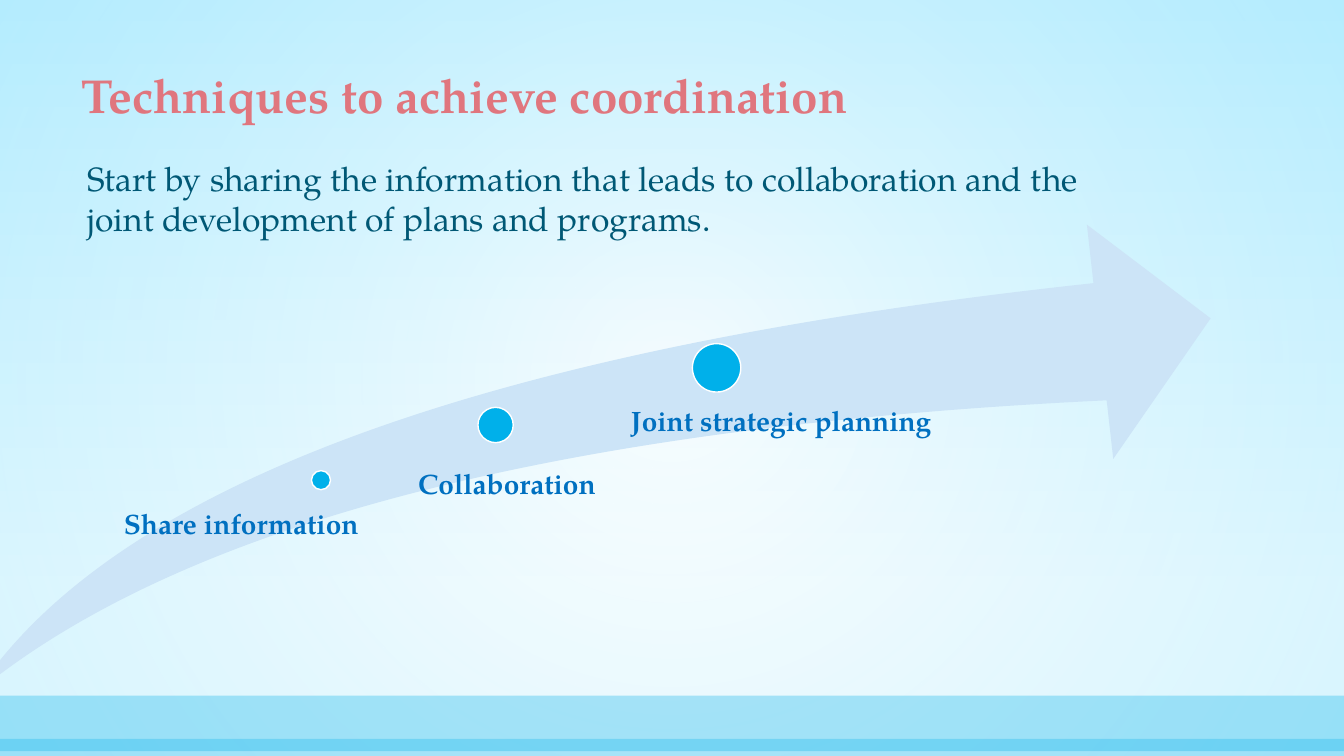
import pptx
import pptx.util
import pptx.dml.color
import pptx.enum.shapes
import pptx.enum.text
import pptx.oxml
import pptx.oxml.ns

Cm = pptx.util.Cm
Pt = pptx.util.Pt
KIND = pptx.enum.shapes.MSO_SHAPE
ANCHOR = pptx.enum.text.MSO_ANCHOR
ALIGN = pptx.enum.text.PP_ALIGN

WIDE, HIGH = 33.87, 19.05
FONT = "TeX Gyre Pagella"
HUES = {
    "sky": "C8F1FF", "edge": "91E4FF", "white": "FFFFFF", "dot": "00B0EA",
    "arrow": "CCE4F7", "title": "E0767E", "body": "005875", "label": "0070C0",
}

TITLE = "Techniques to achieve coordination"
BODY = ("Start by sharing the information that leads to collaboration "
        "and the joint development of plans and programs.")

# text, dot (centre x, centre y, diameter), label box, left inset
STEPS = [
    ("Share information", (8.09, 12.1, 0.48), (2.87, 12.85, 7.47, 1.42), 0.25),
    ("Collaboration", (12.49, 10.71, 0.89), (10.06, 11.86, 6.63, 2.82), 0.48),
    ("Joint strategic planning", (18.06, 9.27, 1.22),
     (15.24, 10.26, 11.71, 1.8), 0.66),
]

# top, height, opacity in percent
BANDS = [(17.53, 1.4, 30), (18.62, 0.43, 28)]

# stops: position in percent, colour, opacity in percent
SKY = [(0, "sky", 56), (79, "white", 100)]
GLOW = [(0, "white", 49), (100, "edge", 35)]
DOWN = '<a:lin ang="5400000" scaled="0"/>'
ROUND = ('<a:path path="circle"><a:fillToRect l="50000" t="50000" '
         'r="50000" b="50000"/></a:path>')


def rgb(name):
    return pptx.dml.color.RGBColor.from_string(HUES[name])


def find_fill(root):
    return root.find(".//" + pptx.oxml.ns.qn("a:solidFill"))


def shade(root, stops, course):
    """Replace the first solid fill under root by a gradient."""
    marks = "".join(
        f'<a:gs pos="{pos * 1000}"><a:srgbClr val="{HUES[name]}">'
        f'<a:alpha val="{alpha * 1000}"/></a:srgbClr></a:gs>'
        for pos, name, alpha in stops)
    grad = pptx.oxml.parse_xml(
        f'<a:gradFill {pptx.oxml.ns.nsdecls("a")} rotWithShape="1">'
        f'<a:gsLst>{marks}</a:gsLst>{course}</a:gradFill>')
    old = find_fill(root)
    old.getparent().replace(old, grad)


def fade(shape, alpha):
    node = pptx.oxml.parse_xml(
        f'<a:alpha {pptx.oxml.ns.nsdecls("a")} val="{alpha * 1000}"/>')
    find_fill(shape.element)[0].append(node)


def add_form(slide, kind, box, hue, line=None):
    form = slide.shapes.add_shape(kind, *map(Cm, box))
    form.shadow.inherit = False
    form.fill.solid()
    form.fill.fore_color.rgb = rgb(hue)
    if line:
        form.line.color.rgb = rgb(line)
        form.line.width = Pt(1)
    else:
        form.line.fill.background()
    return form


def add_text(slide, text, box, size, hue, bold=False, inset=(0.25, 0.13, 0.25, 0.13),
             anchor=ANCHOR.TOP, align=ALIGN.LEFT, space=1.0):
    frame = slide.shapes.add_textbox(*map(Cm, box)).text_frame
    frame.word_wrap = True
    frame.vertical_anchor = anchor
    (frame.margin_left, frame.margin_top,
     frame.margin_right, frame.margin_bottom) = map(Cm, inset)
    para = frame.paragraphs[0]
    para.alignment = align
    para.line_spacing = space
    run = para.add_run()
    run.text = text
    run.font.name = FONT
    run.font.size = Pt(size)
    run.font.bold = bold
    run.font.color.rgb = rgb(hue)


def add_back(slide):
    fill = slide.background.fill
    fill.solid()
    fill.fore_color.rgb = rgb("sky")
    shade(slide.element, SKY, DOWN)
    glow = add_form(slide, KIND.RECTANGLE, (0, 0, WIDE, HIGH), "white")
    shade(glow.element, GLOW, ROUND)
    for top, high, alpha in BANDS:
        band = add_form(slide, KIND.RECTANGLE, (0, top, WIDE, high), "dot")
        fade(band, alpha)


def add_steps(slide):
    arrow = add_form(slide, KIND.SWOOSH_ARROW, (-0.61, 5.66, 31.12, 11.81), "arrow")
    arrow.adjustments[0] = arrow.adjustments[1] = 0.25
    for text, (x, y, size), box, left in STEPS:
        add_form(slide, KIND.OVAL, (x - size / 2, y - size / 2, size, size),
                 "dot", line="white")
        add_text(slide, text, box, 20, "label", bold=True,
                 inset=(left, 0, 0, 0), space=0.9)


def main():
    deck = pptx.Presentation()
    deck.slide_width, deck.slide_height = Cm(WIDE), Cm(HIGH)
    slide = deck.slides.add_slide(deck.slide_layouts[6])
    add_back(slide)
    add_text(slide, BODY, (0.94, 3.61, 26.49, 2.41), 24, "body",
             inset=(1.27, 0.36, 0.25, 0), anchor=ANCHOR.MIDDLE, align=ALIGN.JUSTIFY)
    add_steps(slide)
    add_text(slide, TITLE, (1.8, 1.52, 23.65, 1.7), 34, "title", bold=True)
    deck.save("out.pptx")


if __name__ == "__main__":
    main()
